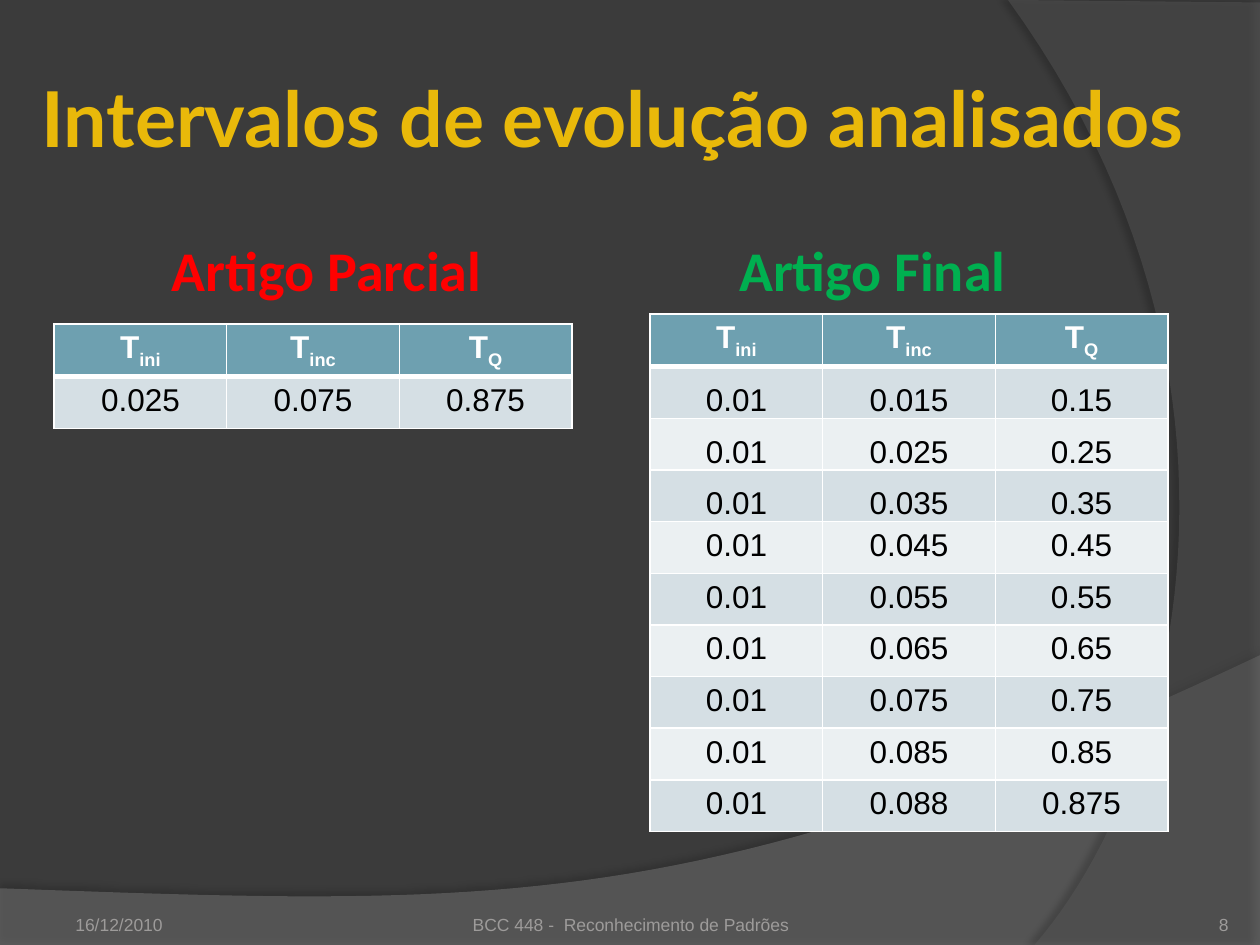
from lxml.etree import SubElement
from pptx import Presentation
from pptx.dml.color import RGBColor
from pptx.enum.text import MSO_ANCHOR, MSO_AUTO_SIZE, PP_ALIGN
from pptx.oxml import parse_xml
from pptx.oxml.ns import nsdecls, qn
from pptx.util import Inches, Pt

COLORS = {
    "background": "3B3B3B", "wave": "7F7F7F", "arc": "5E5E5E", "shadow": "000000",
    "title": "E9B90A", "partial": "FF0000", "final": "00B050", "footer": "9D9B9A",
    "header": "6EA0B0", "odd": "D5DFE4", "even": "EBF0F2",
    "white": "FFFFFF", "black": "000000",
}
HEADINGS = [("T", "ini"), ("T", "inc"), ("T", "Q")]
PARTIAL_ROWS = [("0.025", "0.075", "0.875")]
FINAL_ROWS = [("0.01", increment, limit) for increment, limit in [
    ("0.015", "0.15"), ("0.025", "0.25"), ("0.035", "0.35"),
    ("0.045", "0.45"), ("0.055", "0.55"), ("0.065", "0.65"),
    ("0.075", "0.75"), ("0.085", "0.85"), ("0.088", "0.875"),
]]
COLUMN_WIDTH, ROW_HEIGHT = 1.37, 0.41


def color(name):
    return RGBColor.from_string(COLORS[name])


def add_run(paragraph, text, color_name, **formats):
    run = paragraph.add_run()
    run.text = text
    run.font.color.rgb = color(color_name)
    for name, value in formats.items():
        setattr(run.font, name, value)
    return run


def format_frame(frame, anchor, margins):
    left, top, right, bottom = (Inches(margin) for margin in margins)
    settings = {
        "word_wrap": True, "auto_size": MSO_AUTO_SIZE.NONE, "vertical_anchor": anchor,
        "margin_left": left, "margin_top": top,
        "margin_right": right, "margin_bottom": bottom,
    }
    for name, value in settings.items():
        setattr(frame, name, value)


def bezier(start, control_1, control_2, end, steps=48):
    """Return points along a cubic curve, without its start."""
    points = []
    for step in range(1, steps + 1):
        t = step / steps
        weights = ((1 - t) ** 3, 3 * t * (1 - t) ** 2, 3 * t * t * (1 - t), t ** 3)
        corners = (start, control_1, control_2, end)
        points.append(tuple(sum(w * corner[axis] for w, corner in zip(weights, corners))
                            for axis in (0, 1)))
    return points


def add_swoosh(slide, points, color_name, opacity, shadow):
    """Add a translucent outline; shadow is (opacity, blur, distance, angle)."""
    # The builder rounds to whole units, so points are given in EMU.
    start, *others = [(Inches(x), Inches(y)) for x, y in points]
    builder = slide.shapes.build_freeform(*start)
    builder.add_line_segments(others, close=True)
    shape = builder.convert_to_shape()
    shape.fill.solid()
    shape.fill.fore_color.rgb = color(color_name)
    shape.line.fill.background()
    fill_color = shape._element.spPr.find(qn("a:solidFill"))[0]
    SubElement(fill_color, qn("a:alpha"), val=str(opacity * 1000))
    shadow_opacity, blur, distance, angle = shadow
    shape._element.spPr.append(parse_xml(
        f'<a:effectLst {nsdecls("a")}><a:outerShdw blurRad="{Pt(blur)}" '
        f'dist="{Pt(distance)}" dir="{angle * 60000}" algn="ctr" rotWithShape="0">'
        f'<a:srgbClr val="{COLORS["shadow"]}"><a:alpha val="{shadow_opacity * 1000}"/>'
        '</a:srgbClr></a:outerShdw></a:effectLst>'))


def add_background(slide):
    slide.background.fill.solid()
    slide.background.fill.fore_color.rgb = color("background")
    wave = [(0, 7.05), (0, 7.51), (10, 7.51), (10, 5.2)]
    wave += bezier((10, 5.2), (5.59, 7.29), (3.91, 7.19), (0, 7.05))
    add_swoosh(slide, wave, "wave", 45, (35, 4, 3.5, 270))
    arc = [(10, 0.02), (10, 7.5), (8.21, 7.5)]
    arc += bezier((8.21, 7.5), (9.35, 6.19), (10.18, 3), (8, 0))
    add_swoosh(slide, arc, "arc", 40, (45, 4, 4, 180))


def add_title(slide, box):
    """Fill the title placeholder and bring it in front of the background."""
    title = slide.shapes.title
    slide.shapes._spTree.append(title._element)
    title.left, title.top, title.width, title.height = (Inches(value) for value in box)
    format_frame(title.text_frame, MSO_ANCHOR.MIDDLE, (0.05,) * 4)
    paragraph = title.text_frame.paragraphs[0]
    paragraph.alignment = PP_ALIGN.LEFT
    add_run(paragraph, "Intervalos de evolução analisados", "title",
            name="Lato", size=Pt(44), bold=True)


def add_label(slide, box, text, color_name, alignment, anchor, margins, **formats):
    label = slide.shapes.add_textbox(*(Inches(value) for value in box))
    format_frame(label.text_frame, anchor, margins)
    paragraph = label.text_frame.paragraphs[0]
    paragraph.alignment = alignment
    add_run(paragraph, text, color_name, **formats)


def add_subtitle(slide, left, text, color_name):
    add_label(slide, (left, 1.82, 3.07, 0.64), text, color_name, PP_ALIGN.CENTER,
              MSO_ANCHOR.TOP, (0.1, 0.05, 0.1, 0.05),
              name="Calibri", size=Pt(32), bold=True)


def add_footer(slide, top, height):
    for left, width, text, alignment, margins in [
        (0.5, 2.33, "16/12/2010", PP_ALIGN.LEFT, (0.1, 0.05, 0.1, 0)),
        (3.42, 3.17, "BCC 448 -  Reconhecimento de Padrões", PP_ALIGN.CENTER,
         (0, 0.05, 0, 0)),
        (8.92, 0.83, "8", PP_ALIGN.RIGHT, (0, 0, 0, 0)),
    ]:
        add_label(slide, (left, top, width, height), text, "footer", alignment,
                  MSO_ANCHOR.BOTTOM, margins, name="Arial", size=Pt(10))


def format_cell(cell, fill_name, top=1, bottom=1):
    """Fill a cell and draw its white borders, with widths in points."""
    cell.fill.solid()
    cell.fill.fore_color.rgb = color(fill_name)
    properties = cell._tc.get_or_add_tcPr()
    for index, (side, width) in enumerate(
            [("lnL", 1), ("lnR", 1), ("lnT", top), ("lnB", bottom)]):
        properties.insert(index, parse_xml(
            f'<a:{side} {nsdecls("a")} w="{Pt(width)}"><a:solidFill>'
            f'<a:srgbClr val="{COLORS["white"]}"/></a:solidFill></a:{side}>'))
    cell.text_frame.paragraphs[0].alignment = PP_ALIGN.CENTER


def add_interval_table(slide, left, top, rows, bottom_rows=0):
    """Add a table whose first bottom_rows body rows sit on the cell's lower edge."""
    table = slide.shapes.add_table(
        len(rows) + 1, len(HEADINGS), Inches(left), Inches(top),
        Inches(COLUMN_WIDTH * len(HEADINGS)), Inches(ROW_HEIGHT * (len(rows) + 1))).table
    for column in table.columns:
        column.width = Inches(COLUMN_WIDTH)
    for row in table.rows:
        row.height = Inches(ROW_HEIGHT)
    text_format = {"name": "Arial", "size": Pt(18)}
    for column, (symbol, subscript) in enumerate(HEADINGS):
        cell = table.cell(0, column)
        format_cell(cell, "header", bottom=3)
        paragraph = cell.text_frame.paragraphs[0]
        add_run(paragraph, symbol, "white", bold=True, **text_format)
        run = add_run(paragraph, subscript, "white", bold=True, **text_format)
        run._r.get_or_add_rPr().set("baseline", "-25000")
    for row, values in enumerate(rows, start=1):
        for column, value in enumerate(values):
            cell = table.cell(row, column)
            format_cell(cell, "odd" if row % 2 else "even", top=3 if row == 1 else 1)
            add_run(cell.text_frame.paragraphs[0], value, "black", bold=False,
                    **text_format)
            if row <= bottom_rows:
                cell.vertical_anchor = MSO_ANCHOR.BOTTOM
                cell.margin_left = cell.margin_top = cell.margin_right = Inches(0.01)
                cell.margin_bottom = 0


def main():
    presentation = Presentation()
    presentation.slide_width, presentation.slide_height = Inches(10), Inches(7.5)
    slide = presentation.slides.add_slide(presentation.slide_layouts[5])
    add_background(slide)
    add_title(slide, (0.28, 0.3, 9.45, 1.25))
    add_footer(slide, 7.02, 0.4)
    add_subtitle(slide, 1.06, "Artigo Parcial", "partial")
    add_subtitle(slide, 5.39, "Artigo Final", "final")
    add_interval_table(slide, 0.43, 2.57, PARTIAL_ROWS)
    add_interval_table(slide, 5.16, 2.49, FINAL_ROWS, bottom_rows=3)
    presentation.save("out.pptx")


if __name__ == "__main__":
    main()
